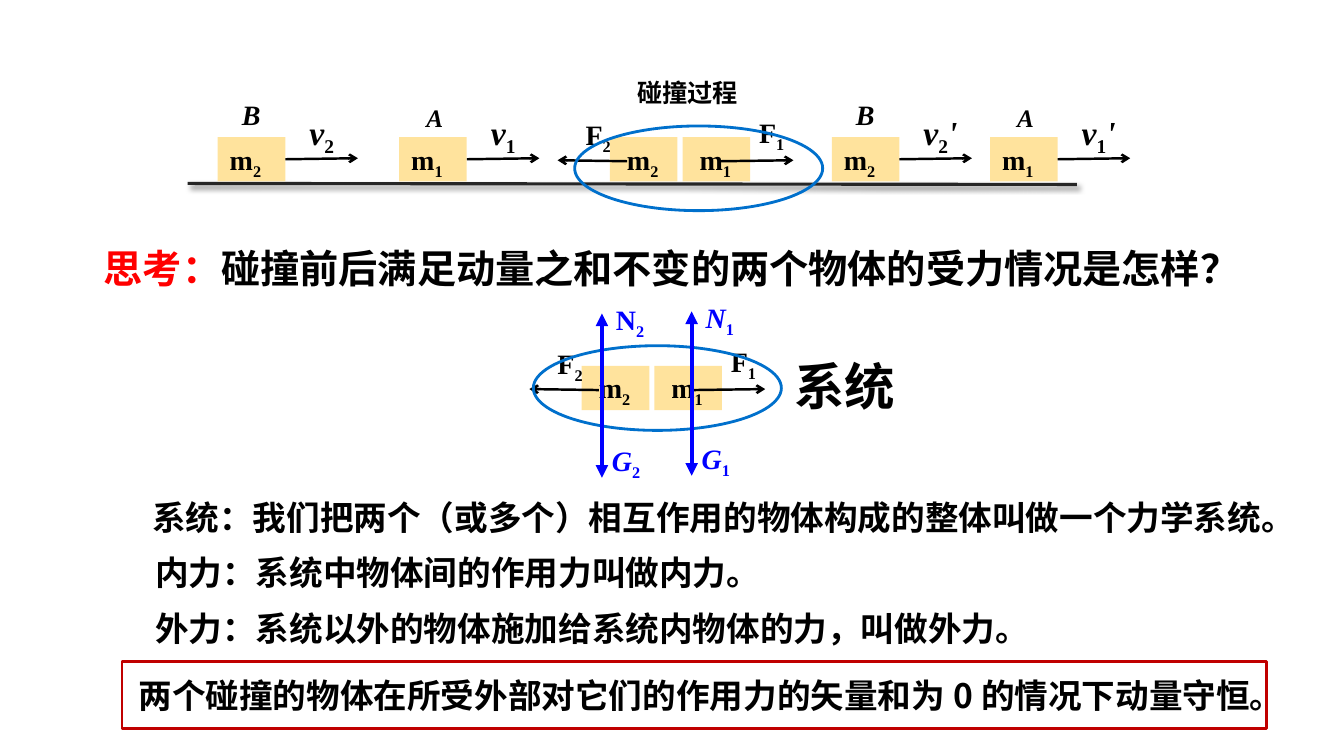
from lxml import etree
from pptx import Presentation
from pptx.dml.color import RGBColor
from pptx.enum.shapes import MSO_CONNECTOR, MSO_SHAPE
from pptx.enum.text import MSO_ANCHOR, MSO_AUTO_SIZE, PP_ALIGN
from pptx.oxml.ns import qn
from pptx.util import Inches, Pt

STRAIGHT = MSO_CONNECTOR.STRAIGHT
RECTANGLE, OVAL = MSO_SHAPE.RECTANGLE, MSO_SHAPE.OVAL
TOP, MIDDLE = MSO_ANCHOR.TOP, MSO_ANCHOR.MIDDLE
LEFT, CENTER = PP_ALIGN.LEFT, PP_ALIGN.CENTER
NO_FIT = MSO_AUTO_SIZE.NONE
RIGHT_SIDE = 3

COLORS = {
    "text": "000000", "accent": "FF0000", "block": "FFE39D", "ground": "262626",
    "system": "0070CC", "force": "0000FF", "frame": "C00000", "halo": "FFFFFF",
}
SERIF = "Times New Roman"
CJK = "Noto Sans CJK SC"
BLOCK_W, BLOCK_H = 0.67, 0.44
ARROW_LENGTH = 0.72


def rgb(name):
    return RGBColor.from_string(COLORS[name])


def inches(*lengths):
    return [Inches(length) for length in lengths]


def format_run(run, size, font=SERIF, color="text", italic=False):
    run.font.size = Pt(size)
    run.font.name = font
    run.font.bold = True
    run.font.italic = italic
    run.font.color.rgb = rgb(color)
    if font != SERIF:
        east_asian = etree.SubElement(run.font._element, qn("a:ea"))
        east_asian.set("typeface", font if font.startswith("Noto") else CJK)


def add_text(slide, box, text, size, font=SERIF, italic=False, wrap=True):
    frame = slide.shapes.add_textbox(*inches(*box)).text_frame
    frame.word_wrap = wrap
    frame.text = text
    run = frame.paragraphs[0].runs[0]
    format_run(run, size, font, italic=italic)
    return run


def add_symbol(slide, box, letter, index, size=20, color="text", italic=False,
               prime="", wrap=True):
    """A letter with a subscript and, if given, a prime."""
    frame = slide.shapes.add_textbox(*inches(*box)).text_frame
    frame.word_wrap = wrap
    for part, slanted in ((letter, italic), (index, False), (prime, italic)):
        if part:
            run = frame.paragraphs[0].add_run()
            run.text = part
            format_run(run, size, color=color, italic=slanted)
            if part == index:
                run.font._element.set("baseline", "-25000")


def add_line(slide, start, end, color, width, head=None):
    line = slide.shapes.add_connector(STRAIGHT, *inches(*start, *end))
    line.line.color.rgb = rgb(color)
    line.line.width = Pt(width)
    if head:
        etree.SubElement(line.line._get_or_add_ln(), qn("a:tailEnd"), type=head)
    etree.SubElement(line._element.spPr, qn("a:effectLst"))
    return line


def add_outline(slide, kind, box, color):
    outline = slide.shapes.add_shape(kind, *inches(*box))
    outline.shadow.inherit = False
    outline.fill.background()
    outline.line.color.rgb = rgb(color)
    outline.line.width = Pt(2)
    return outline


def add_block(slide, left, top, index, label_shift):
    block = slide.shapes.add_shape(RECTANGLE, *inches(left, top, BLOCK_W, BLOCK_H))
    block.shadow.inherit = False
    block.fill.solid()
    block.fill.fore_color.rgb = rgb("block")
    block.line.fill.background()
    add_symbol(slide, (left + label_shift, top, 0.62, 0.44), "m", index)
    return block


def add_moving_block(slide, left, top, name, index, prime=""):
    block = add_block(slide, left, top, index, 0.02)
    if name == "B":
        add_text(slide, (left + 0.14, top - 0.44, 0.6, 0.44), name, 20, italic=True)
    else:
        add_text(slide, (left + 0.17, top - 0.39, 0.37, 0.4), name, 18,
                 italic=True, wrap=False)
    start = left + BLOCK_W
    velocity = add_line(slide, (start, top + 0.22),
                        (start + ARROW_LENGTH, top + 0.21), "text", 1.75, "arrow")
    velocity.begin_connect(block, RIGHT_SIDE)
    add_symbol(slide, (left + 0.81, top - 0.3, 0.67 if prime else 0.46, 0.5),
               "v", index, 24, italic=True, prime=prime, wrap=False)


def add_colliding_pair(slide, left, top):
    """Two touching blocks with the forces they exert on each other."""
    for shift, index in ((0, "2"), (0.72, "1")):
        add_block(slide, left + shift, top, index, 0.07)
    # (arrow start, arrow end, label left, label top, index)
    for start, end, label_x, label_y, index in (
            (1.1, 1.82, 1.38, -0.26, "1"), (0.17, -0.52, -0.34, -0.24, "2")):
        add_line(slide, (left + start, top + 0.24), (left + end, top + 0.23),
                 "text", 1.75, "arrow")
        add_symbol(slide, (left + label_x, top + label_y, 0.6, 0.44), "F", index)


def add_collision(slide, left, top):
    # Ground with its soft shadow
    ground = add_line(slide, (left, top + 1.1), (left + 8.82, top + 1.11),
                      "ground", 2.25)
    effects = ground._element.spPr.find(qn("a:effectLst"))
    shadow = etree.SubElement(effects, qn("a:outerShdw"), blurRad=str(Pt(4)),
                              dist=str(Pt(3)), dir="2700000", algn="tl")
    shade = etree.SubElement(shadow, qn("a:srgbClr"), val=COLORS["text"])
    etree.SubElement(shade, qn("a:alpha"), val="50000")
    # Before, during and after the collision
    for shift, name, index, prime in ((0.3, "B", "2", ""), (2.1, "A", "1", ""),
                                      (6.39, "B", "2", "'"), (7.96, "A", "1", "'")):
        add_moving_block(slide, left + shift, top + 0.64, name, index, prime)
    add_colliding_pair(slide, left + 4.19, top + 0.64)
    add_outline(slide, OVAL, (left + 3.84, top + 0.53, 2.46, 0.84), "system")
    add_text(slide, (left + 4.36, top, 1.28, 0.4), "碰撞过程", 18, "Calibri")


def add_question(slide, left, top, width, height):
    title = slide.shapes.title
    title.left, title.top, title.width, title.height = inches(left, top, width, height)
    frame = title.text_frame
    frame.auto_size = NO_FIT
    frame.vertical_anchor = TOP
    paragraph = frame.paragraphs[0]
    paragraph.alignment = LEFT
    paragraph.line_spacing = 1.0
    for text, color in (("思考：", "accent"),
                        ("碰撞前后满足动量之和不变的两个物体的受力情况是怎样？", "text")):
        run = paragraph.add_run()
        run.text = text
        format_run(run, 28, "Noto Sans CJK JP", color)


def add_system(slide, left, top):
    add_colliding_pair(slide, left + 0.52, top + 0.69)
    add_outline(slide, OVAL, (left + 0.04, top + 0.49, 2.46, 0.84), "system")
    # Support force and weight on each block
    for shift, middle, index, slanted in ((0.72, 1.01, "2", False),
                                          (1.61, 0.99, "1", True)):
        x, y = left + shift, top + middle
        for reach in (-0.84, 0.79):
            add_line(slide, (x, y), (x, y + reach), "force", 3, "triangle")
        add_symbol(slide, (x + 0.04, y - 1, 0.49, 0.44), "N", index,
                   color="force", italic=slanted, wrap=False)
        add_symbol(slide, (x, y + 0.4, 0.49, 0.44), "G", index,
                   color="force", italic=True, wrap=False)
    # System caption with a thin white outline
    caption = add_text(slide, (left + 2.53, top + 0.53, 1.2, 0.71), "系统", 36,
                       "Calibri", wrap=False)
    halo = etree.Element(qn("a:ln"), w=str(Pt(0.75)))
    fill = etree.SubElement(halo, qn("a:solidFill"))
    etree.SubElement(fill, qn("a:srgbClr"), val=COLORS["halo"])
    caption.font._element.insert(0, halo)


def add_definitions(slide, left, top, width):
    definitions = (
        (0, "系统：我们把两个（或多个）相互作用的物体构成的整体叫做一个力学系统。"),
        (0.03, "内力：系统中物体间的作用力叫做内力。"),
        (0.03, "外力：系统以外的物体施加给系统内物体的力，叫做外力。"),
    )
    for row, (indent, definition) in enumerate(definitions):
        add_text(slide, (left + indent, top + 0.55 * row, width, 0.5),
                 definition, 24, "Arial")


def add_conclusion(slide, left, top, width, height):
    conclusion = add_outline(slide, RECTANGLE, (left, top, width, height), "frame")
    frame = conclusion.text_frame
    frame.word_wrap = True
    frame.vertical_anchor = MIDDLE
    frame.text = "两个碰撞的物体在所受外部对它们的作用力的矢量和为0的情况下动量守恒。"
    frame.paragraphs[0].alignment = CENTER
    format_run(frame.paragraphs[0].runs[0], 24, CJK)


def main():
    presentation = Presentation()
    presentation.slide_width, presentation.slide_height = inches(13.33, 7.5)
    slide = presentation.slides.add_slide(presentation.slide_layouts[5])
    add_question(slide, 0.93, 2.37, 11.71, 0.57)
    add_collision(slide, 1.86, 0.72)
    add_system(slide, 5.25, 2.94)
    add_definitions(slide, 1.41, 4.88, 11.82)
    add_conclusion(slide, 1.21, 6.56, 11.35, 0.67)
    presentation.save("out.pptx")


if __name__ == "__main__":
    main()
